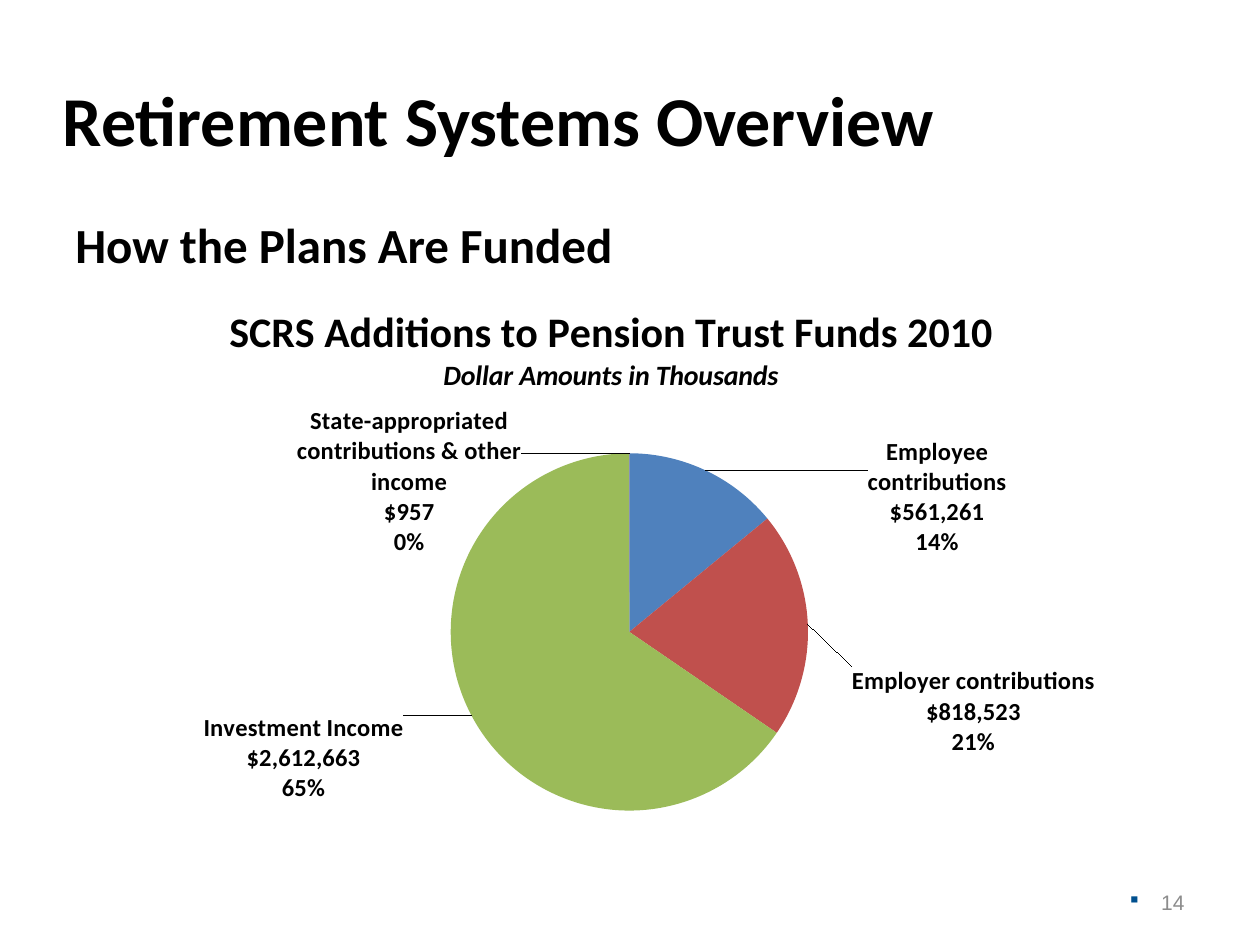
from dataclasses import dataclass

from lxml.etree import SubElement
from pptx import Presentation
from pptx.chart.data import CategoryChartData
from pptx.dml.color import RGBColor
from pptx.enum.chart import XL_CHART_TYPE, XL_LABEL_POSITION
from pptx.enum.text import MSO_ANCHOR, PP_ALIGN
from pptx.oxml import parse_xml
from pptx.oxml.ns import nsdecls, qn
from pptx.util import Inches, Pt


@dataclass(frozen=True)
class Theme:
    face: str = "Calibri"
    number_face: str = "Arial"
    ink: str = "000000"
    muted: str = "8C8C8C"
    bullet: str = "00508F"
    slices: tuple = ("4F81BD", "C0504D", "9BBB59", "8064A2")
    title: int = 40
    heading: int = 28
    chart_title: int = 24
    chart_subtitle: int = 16
    label: int = 14
    number: int = 12


def manual_layout(x, y, width=None, height=None):
    modes, sizes = "", ""
    if width:
        modes = ('<c:layoutTarget val="inner"/><c:xMode val="edge"/>'
                 '<c:yMode val="edge"/>')
        sizes = f'<c:w val="{width}"/><c:h val="{height}"/>'
    return parse_xml(
        f'<c:layout {nsdecls("c")}><c:manualLayout>{modes}'
        f'<c:x val="{x}"/><c:y val="{y}"/>{sizes}'
        '</c:manualLayout></c:layout>')


class SlideBuilder:
    def __init__(self, deck, theme):
        self.deck = deck
        self.theme = theme
        self.page = deck.slides.add_slide(deck.slide_layouts[6])

    def place(self, left, top, width, height):
        across, down = self.deck.slide_width, self.deck.slide_height
        return (round(left * across), round(top * down),
                round(width * across), round(height * down))

    def style(self, font, size, color=None, face=None, bold=True, italic=None):
        font.name = face or self.theme.face
        font.size = Pt(size)
        font.bold = bold
        font.italic = italic
        font.color.rgb = RGBColor.from_string(color or self.theme.ink)

    def text(self, area, words, size, anchor=MSO_ANCHOR.MIDDLE, wrap=True):
        box = self.page.shapes.add_textbox(*self.place(*area))
        frame = box.text_frame
        frame.word_wrap = wrap
        frame.vertical_anchor = anchor
        para = frame.paragraphs[0]
        para.text = words
        self.style(para.font, size)
        return para

    def slide_number(self, area, words):
        theme = self.theme
        para = self.text(area, words, theme.number)
        para.alignment = PP_ALIGN.RIGHT
        props = para._p.get_or_add_pPr()
        props.set("marL", str(Inches(0.25)))
        props.set("indent", str(Inches(-0.25)))
        color = parse_xml(f'<a:buClr {nsdecls("a")}><a:srgbClr val="{theme.bullet}"/></a:buClr>')
        props.insert(0, color)
        props.insert(1, parse_xml(f'<a:buFont {nsdecls("a")} typeface="Wingdings"/>'))
        props.insert(2, parse_xml(f'<a:buChar {nsdecls("a")} char="§"/>'))
        self.style(para.font, theme.number, theme.muted, theme.number_face, bold=False)

    def chart_title(self, chart, title, subtitle):
        frame = chart.chart_title.text_frame
        frame.text = title
        self.style(frame.paragraphs[0].runs[0].font, self.theme.chart_title)
        span = frame.add_paragraph().add_run()
        span.text = subtitle
        self.style(span.font, self.theme.chart_subtitle, italic=True)
        chart.chart_title.include_in_layout = False

    def slice_label(self, point, lines, offset):
        label = point.data_label
        frame = label.text_frame
        for index, line in enumerate(lines):
            para = frame.add_paragraph() if index else frame.paragraphs[0]
            span = para.add_run()
            span.text = line
            self.style(span.font, self.theme.label)
        label.position = XL_LABEL_POSITION.OUTSIDE_END
        element = label._dLbl
        element.find(qn("c:idx")).addnext(manual_layout(*offset))

    def pie(self, area, title, subtitle, plot_area, rows):
        data = CategoryChartData(number_format="#,##0")
        data.categories = [name for name, *_ in rows]
        data.add_series("Series 1", [amount for _, amount, *_ in rows])
        chart = self.page.shapes.add_chart(
            XL_CHART_TYPE.PIE, *self.place(*area), data).chart
        chart.has_legend = False
        self.style(chart.font, 10, bold=False)
        self.chart_title(chart, title, subtitle)
        plot = chart.plots[0]
        plot.vary_by_categories = True
        plot_element = chart._chartSpace.chart.plotArea
        for old in plot_element.findall(qn("c:layout")):
            plot_element.remove(old)
        plot_element.insert(0, manual_layout(*plot_area))
        series = plot.series[0]
        labels = series.data_labels
        labels.show_value = True
        labels.show_percentage = True
        self.style(labels.font, self.theme.label)
        for index, (name, amount, share, offset) in enumerate(rows):
            point = series.points[index]
            point.format.fill.solid()
            point.format.fill.fore_color.rgb = RGBColor.from_string(self.theme.slices[index])
            point.format.line.fill.background()
            self.slice_label(point, (name, f"${amount:,}", share), offset)
        element = labels._element
        if element.find(qn("c:showLeaderLines")) is None:
            SubElement(element, qn("c:showLeaderLines"))
        element.find(qn("c:showLeaderLines")).set("val", "1")


def main():
    deck = Presentation()
    deck.slide_width, deck.slide_height = Inches(10), Inches(7.5)
    theme = Theme()
    slide = SlideBuilder(deck, theme)
    slide.text((0.04, 0.04, 0.9, 0.17), "Retirement Systems Overview", theme.title)
    slide.slide_number((0.72, 0.93, 0.23, 0.05), "14")
    slide.pie(
        (0, 0.3, 0.97, 0.62),
        "SCRS Additions to Pension Trust Funds 2010",
        "Dollar Amounts in Thousands",
        (0.35, 0.29, 0.33, 0.61),
        [
            ("Employee contributions", 561261, "14%", (0.13, 0.16)),
            ("Employer contributions", 818523, "21%", (0.03, 0.15)),
            ("Investment Income", 2612663, "65%", (-0.05, -0.01)),
            ("State-appropriated contributions & other income", 957, "0%", (-0.18, 0.19)),
        ])
    slide.text((0.05, 0.22, 0.48, 0.08), "How the Plans Are Funded",
               theme.heading, MSO_ANCHOR.TOP, wrap=False)
    deck.save("out.pptx")


if __name__ == "__main__":
    main()
